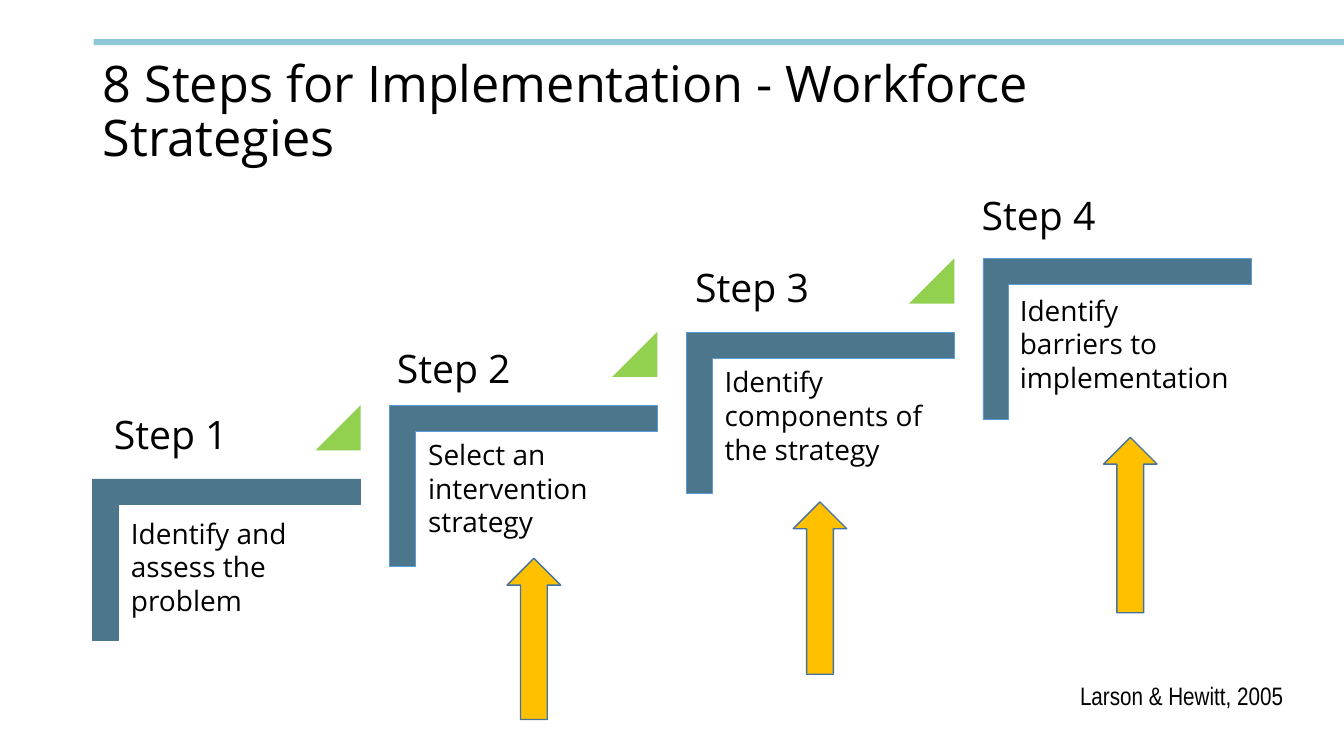
from pptx import Presentation
from pptx.dml.color import RGBColor
from pptx.enum import shapes, text
from pptx.util import Cm, Pt

BLACK = RGBColor(0x00, 0x00, 0x00)
SKY = RGBColor(0x8E, 0xC7, 0xD7)
SLATE = RGBColor(0x4C, 0x76, 0x8C)
BLUE = RGBColor(0x5B, 0x9B, 0xD5)
GREEN = RGBColor(0x92, 0xD0, 0x50)
AMBER = RGBColor(0xFF, 0xC0, 0x00)
ARROW_EDGE = RGBColor(0x43, 0x73, 0x9E)

STEP_DX, STEP_DY = 7.48, 1.85
STEPS = [
    ("Identify and assess the problem", (2.62, 10.21), (3.05, 12.88, 5.82), SLATE),
    ("Select an intervention strategy", (9.75, 8.56), (10.54, 10.9, 5.82), BLUE),
    ("Identify components of the strategy", (17.27, 6.5), (18.01, 9.07, 6.35), BLUE),
    ("Identify\vbarriers to implementation", (24.49, 4.7), (25.45, 7.26, 6.07), BLUE),
]
ARROWS = [(12.78, 14.07, 4.06), (19.99, 12.65, 4.34), (27.81, 11.02, 4.42)]


def add_block(parent, preset, box, fill, edge=None, edge_width=0.5):
    """Add a filled preset shape, with an outline if an edge colour is given."""
    block = parent.add_shape(preset, *map(Cm, box))
    block.shadow.inherit = False
    block.fill.solid()
    block.fill.fore_color.rgb = fill
    if edge is None:
        block.line.fill.background()
    else:
        block.line.color.rgb = edge
        block.line.width = Pt(edge_width)
    return block


def add_words(parent, words, box, size, face="Open Sans"):
    """Add a wrapping text box and return its text frame."""
    frame = parent.add_textbox(*map(Cm, box)).text_frame
    frame.word_wrap = True
    frame.text = words
    font = frame.paragraphs[0].font
    font.name, font.size, font.color.rgb = face, Pt(size), BLACK
    return frame


def add_step(slide, index, detail, label_at, detail_box, edge):
    """Add one stair with its label, its detail and the rise to the next stair."""
    stair = slide.shapes.add_group_shape().shapes
    dx, dy = index * STEP_DX, index * STEP_DY
    tread = add_block(stair, shapes.MSO_SHAPE.CORNER,
                      (3.68 + dx, 10.72 - dy, 4.06, 6.76), SLATE, edge)
    tread.rotation = 90
    tread.adjustments[0] = tread.adjustments[1] = 0.16
    if index < len(STEPS) - 1:
        rise = add_block(stair, shapes.MSO_SHAPE.ISOSCELES_TRIANGLE,
                         (7.95 + dx, 10.21 - dy, 1.14, 1.14), GREEN)
        rise.adjustments[0] = 1
    add_words(stair, f"Step {index + 1}", (*label_at, 5.33, 1.45), 28)
    add_words(stair, detail, (*detail_box, 2.82), 20)


def main():
    """Build the slide and save it."""
    deck = Presentation()
    deck.slide_width, deck.slide_height = Cm(33.87), Cm(19.05)
    slide = deck.slides.add_slide(deck.slide_layouts[6])
    add_block(slide.shapes, shapes.MSO_SHAPE.RECTANGLE, (2.36, 0.99, 31.51, 0.15), SKY)
    title = add_words(slide.shapes, "8 Steps for Implementation - Workforce Strategies",
                      (2.34, 1.02, 29.21, 3.68), 36)
    title.vertical_anchor = text.MSO_ANCHOR.MIDDLE
    title.paragraphs[0].line_spacing = 0.9
    for index, step in enumerate(STEPS):
        add_step(slide, index, *step)
    for left, top, height in ARROWS:
        add_block(slide.shapes, shapes.MSO_SHAPE.UP_ARROW,
                  (left, top, 1.35, height), AMBER, ARROW_EDGE, 1)
    citation = add_words(slide.shapes, "Larson & Hewitt, 2005",
                         (25.5, 17.02, 7.09, 1.02), 18, "Arial Narrow")
    citation.paragraphs[0].alignment = text.PP_ALIGN.RIGHT
    deck.save("out.pptx")


if __name__ == "__main__":
    main()
